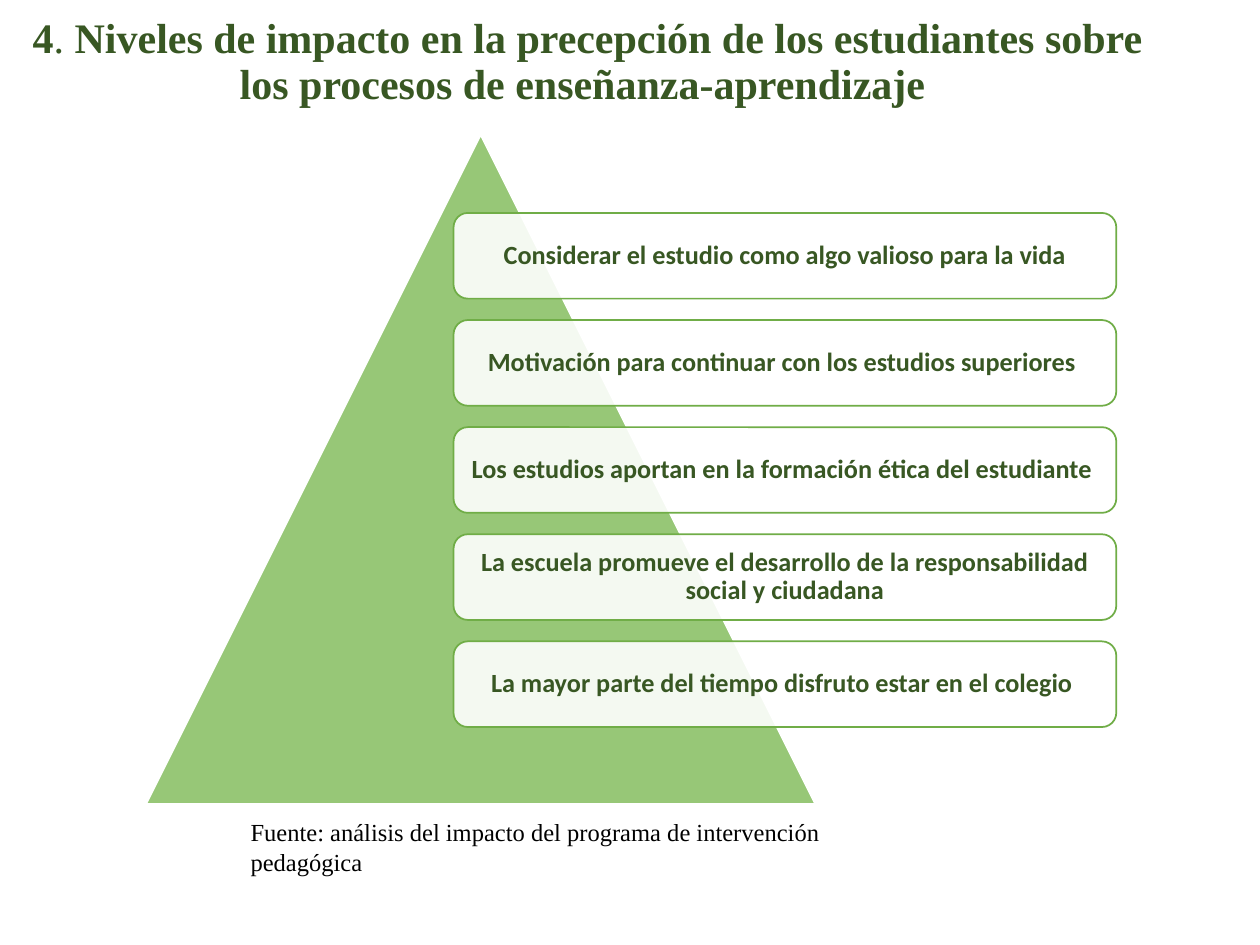
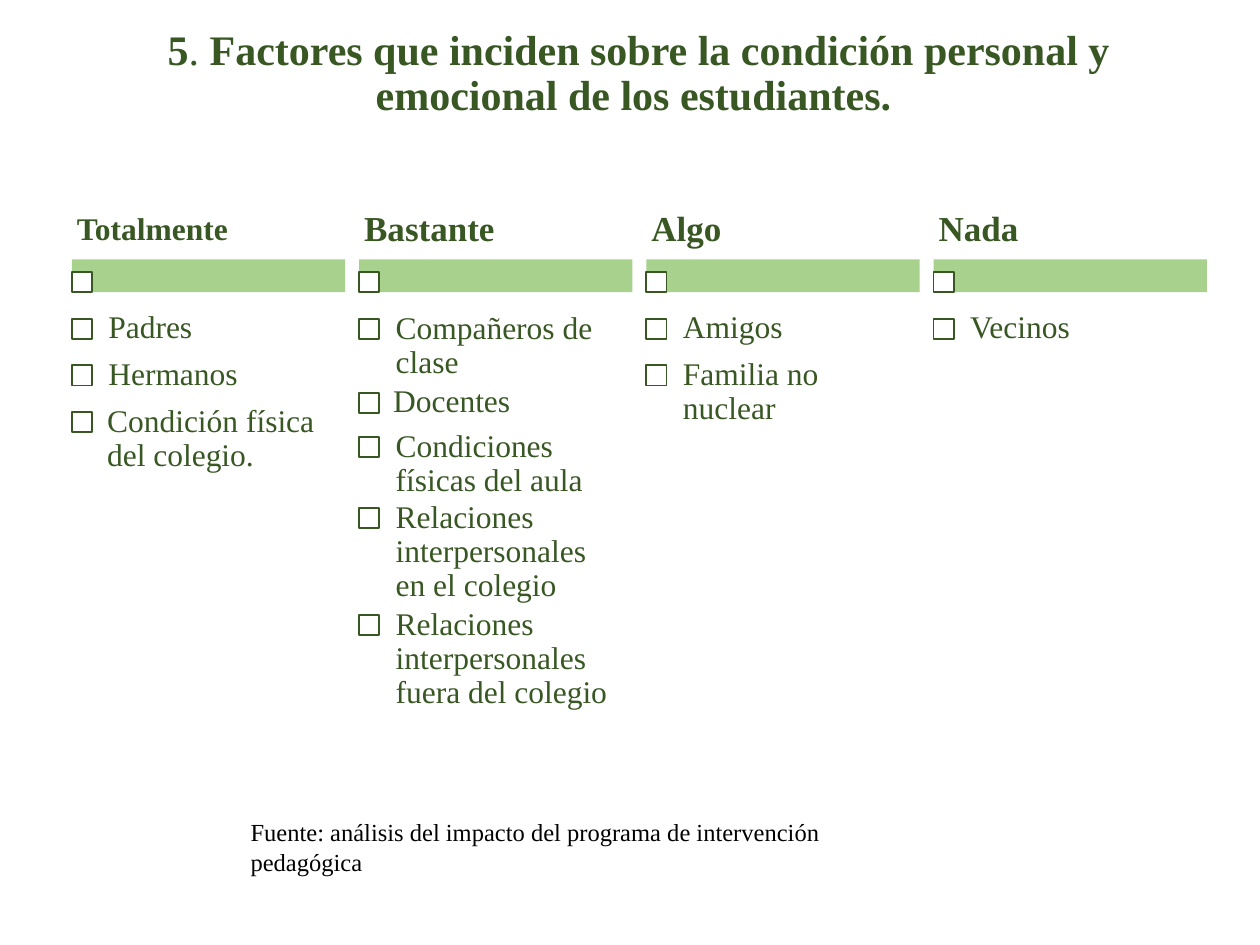
from dataclasses import dataclass
from typing import NamedTuple

from lxml import etree
from pptx import Presentation
from pptx.dml.color import RGBColor
from pptx.enum.shapes import MSO_SHAPE
from pptx.enum.text import MSO_ANCHOR, MSO_AUTO_SIZE, PP_ALIGN
from pptx.oxml.ns import qn
from pptx.util import Inches, Pt

RECTANGLE = MSO_SHAPE.RECTANGLE
ROUNDED = MSO_SHAPE.ROUNDED_RECTANGLE
TRIANGLE = MSO_SHAPE.ISOSCELES_TRIANGLE
MIDDLE = MSO_ANCHOR.MIDDLE
BOTTOM = MSO_ANCHOR.BOTTOM
LEFT = PP_ALIGN.LEFT
CENTER = PP_ALIGN.CENTER
NO_AUTOFIT = MSO_AUTO_SIZE.NONE
TITLE_ONLY = 5


@dataclass(frozen=True)
class Theme:
    dark: RGBColor = RGBColor(0x38, 0x57, 0x23)
    outline: RGBColor = RGBColor(0x70, 0xAD, 0x47)
    pyramid: RGBColor = RGBColor(0x97, 0xC7, 0x77)
    band: RGBColor = RGBColor(0xA9, 0xD1, 0x8E)
    white: RGBColor = RGBColor(0xFF, 0xFF, 0xFF)
    black: RGBColor = RGBColor(0, 0, 0)
    serif: str = "Times New Roman"
    sans: str = "Calibri"
    title_size: float = 24
    heading_size: float = 20
    item_size: float = 18
    level_size: float = 15
    source_size: float = 14
    line_width: float = 1
    line_spacing: float = 0.9


THEME = Theme()


class Box(NamedTuple):
    left: float
    top: float
    width: float
    height: float


class Run(NamedTuple):
    text: str
    size: float
    color: RGBColor = THEME.dark
    bold: bool = False
    font: str = THEME.serif


class Factor(NamedTuple):
    text: str
    top: float
    lines: int = 1
    indent: float = 0.15


class Column(NamedTuple):
    heading: str
    factors: list[Factor]
    heading_size: float = THEME.heading_size


SOURCE = "Fuente: análisis del impacto del programa de intervención pedagógica"
SOURCE_BOX = Box(1.89, 6.55, 5.55, 0.34)

LEVELS = [
    "Considerar el estudio como algo valioso para la vida",
    "Motivación para continuar con los estudios superiores ",
    "Los estudios aportan en la formación ética del estudiante ",
    "La escuela promueve el desarrollo de la responsabilidad social y ciudadana",
    "La mayor parte del tiempo disfruto estar en el colegio ",
]
FIRST_LEVEL = Box(3.6, 1.69, 5.26, 0.68)
LEVEL_PITCH = 0.85

COLUMNS = [
    Column("Totalmente", [
        Factor("Padres", 2.53),
        Factor("Hermanos", 2.9),
        Factor("Condición física del colegio.", 3.27, 2, 0.14),
    ], THEME.item_size),
    Column("Bastante", [
        Factor("Compañeros de clase", 2.53, 2),
        Factor("Docentes", 3.12, 1, 0.13),
        Factor("Condiciones físicas del aula", 3.47, 2),
        Factor("Relaciones interpersonales en el colegio", 4.03, 3),
        Factor("Relaciones interpersonales fuera del colegio", 4.88, 3),
    ]),
    Column("Algo", [
        Factor("Amigos", 2.53),
        Factor("Familia no nuclear", 2.9, 2),
    ]),
    Column("Nada", [Factor("Vecinos", 2.53)]),
]
FIRST_COLUMN_LEFT = 0.57
COLUMN_PITCH = 2.28
COLUMN_WIDTH = 2.17
MARKER_SIZE = 0.16
HEADER_MARKER_TOP = 2.16
ITEM_WIDTH = 2.02
ITEM_HEIGHT = 0.37
ITEM_RISE = 0.11
EXTRA_LINE_DROP = 0.14


def lengths(box: Box) -> list[int]:
    return [Inches(value) for value in box]


def write(shape, runs: list[Run], alignment=LEFT, anchor=MIDDLE,
          spacing: float = THEME.line_spacing,
          inset_x: float = 0.1, inset_y: float = 0.05) -> None:
    frame = shape.text_frame
    frame.word_wrap = True
    frame.auto_size = NO_AUTOFIT
    frame.vertical_anchor = anchor
    frame.margin_left = frame.margin_right = Inches(inset_x)
    frame.margin_top = frame.margin_bottom = Inches(inset_y)
    paragraph = frame.paragraphs[0]
    paragraph.alignment = alignment
    paragraph.line_spacing = spacing
    for item in runs:
        run = paragraph.add_run()
        run.text = item.text
        run.font.name = item.font
        run.font.size = Pt(item.size)
        run.font.bold = item.bold
        run.font.color.rgb = item.color


def add_text(slide, box: Box, runs: list[Run], **options) -> None:
    write(slide.shapes.add_textbox(*lengths(box)), runs, **options)


def add_figure(slide, kind, box: Box, fill: RGBColor, line: RGBColor | None = None):
    shape = slide.shapes.add_shape(kind, *lengths(box))
    shape.shadow.inherit = False
    shape.fill.solid()
    shape.fill.fore_color.rgb = fill
    if line is None:
        shape.line.fill.background()
    else:
        shape.line.color.rgb = line
        shape.line.width = Pt(THEME.line_width)
    return shape


def set_opacity(shape, percent: int) -> None:
    color = shape.element.spPr.find(qn("a:solidFill")).find(qn("a:srgbClr"))
    etree.SubElement(color, qn("a:alpha")).set("val", str(percent * 1000))


def add_titled_slide(presentation, number: str, title: str, box: Box):
    slide = presentation.slides.add_slide(presentation.slide_layouts[TITLE_ONLY])
    placeholder = slide.shapes.title
    placeholder.left, placeholder.top, placeholder.width, placeholder.height = lengths(box)
    write(placeholder, [
        Run(number, THEME.title_size, bold=True),
        Run(". ", THEME.title_size),
        Run(title, THEME.title_size, bold=True),
    ], alignment=CENTER, anchor=BOTTOM)
    add_text(slide, SOURCE_BOX, [Run(SOURCE, THEME.source_size, THEME.black)], spacing=1.0)
    return slide


def add_level(slide, index: int, text: str) -> None:
    box = FIRST_LEVEL._replace(top=FIRST_LEVEL.top + index * LEVEL_PITCH)
    shape = add_figure(slide, ROUNDED, box, THEME.white, THEME.outline)
    set_opacity(shape, 90)
    write(shape, [Run(text, THEME.level_size, bold=True, font=THEME.sans)],
          alignment=CENTER, inset_x=0.09, inset_y=0.09)


def add_marker(slide, left: float, top: float) -> None:
    add_figure(slide, RECTANGLE, Box(left, top, MARKER_SIZE, MARKER_SIZE),
               THEME.white, THEME.dark)


def add_factor(slide, left: float, factor: Factor) -> None:
    add_marker(slide, left, factor.top)
    top = factor.top - ITEM_RISE + EXTRA_LINE_DROP * (factor.lines - 1)
    add_text(slide, Box(left + factor.indent, top, ITEM_WIDTH, ITEM_HEIGHT),
             [Run(factor.text, THEME.item_size)], inset_x=0.14, inset_y=0.14)


def add_column(slide, left: float, column: Column) -> None:
    add_figure(slide, RECTANGLE, Box(left, 2.06, COLUMN_WIDTH, 0.26), THEME.band)
    add_marker(slide, left, HEADER_MARKER_TOP)
    add_text(slide, Box(left, 1.6, COLUMN_WIDTH, 0.46),
             [Run(column.heading, column.heading_size, bold=True)],
             inset_x=0.04, inset_y=0.03)
    for factor in column.factors:
        add_factor(slide, left, factor)


def build_levels_slide(presentation) -> None:
    slide = add_titled_slide(
        presentation, "4",
        "Niveles de impacto en la precepción de los estudiantes sobre "
        "los procesos de enseñanza-aprendizaje ",
        Box(0, 0.1, 9.33, 0.81))
    add_figure(slide, TRIANGLE, Box(1.16, 1.07, 5.31, 5.31), THEME.pyramid, THEME.white)
    for index, text in enumerate(LEVELS):
        add_level(slide, index, text)


def build_factors_slide(presentation) -> None:
    slide = add_titled_slide(
        presentation, "5",
        "Factores que inciden sobre la condición personal y "
        "emocional de los estudiantes. ",
        Box(0.47, 0.19, 9.2, 0.81))
    for index, column in enumerate(COLUMNS):
        add_column(slide, FIRST_COLUMN_LEFT + index * COLUMN_PITCH, column)


def main() -> None:
    presentation = Presentation()
    presentation.slide_width = Inches(10)
    presentation.slide_height = Inches(7.5)
    build_levels_slide(presentation)
    build_factors_slide(presentation)
    presentation.save("out.pptx")


if __name__ == "__main__":
    main()
